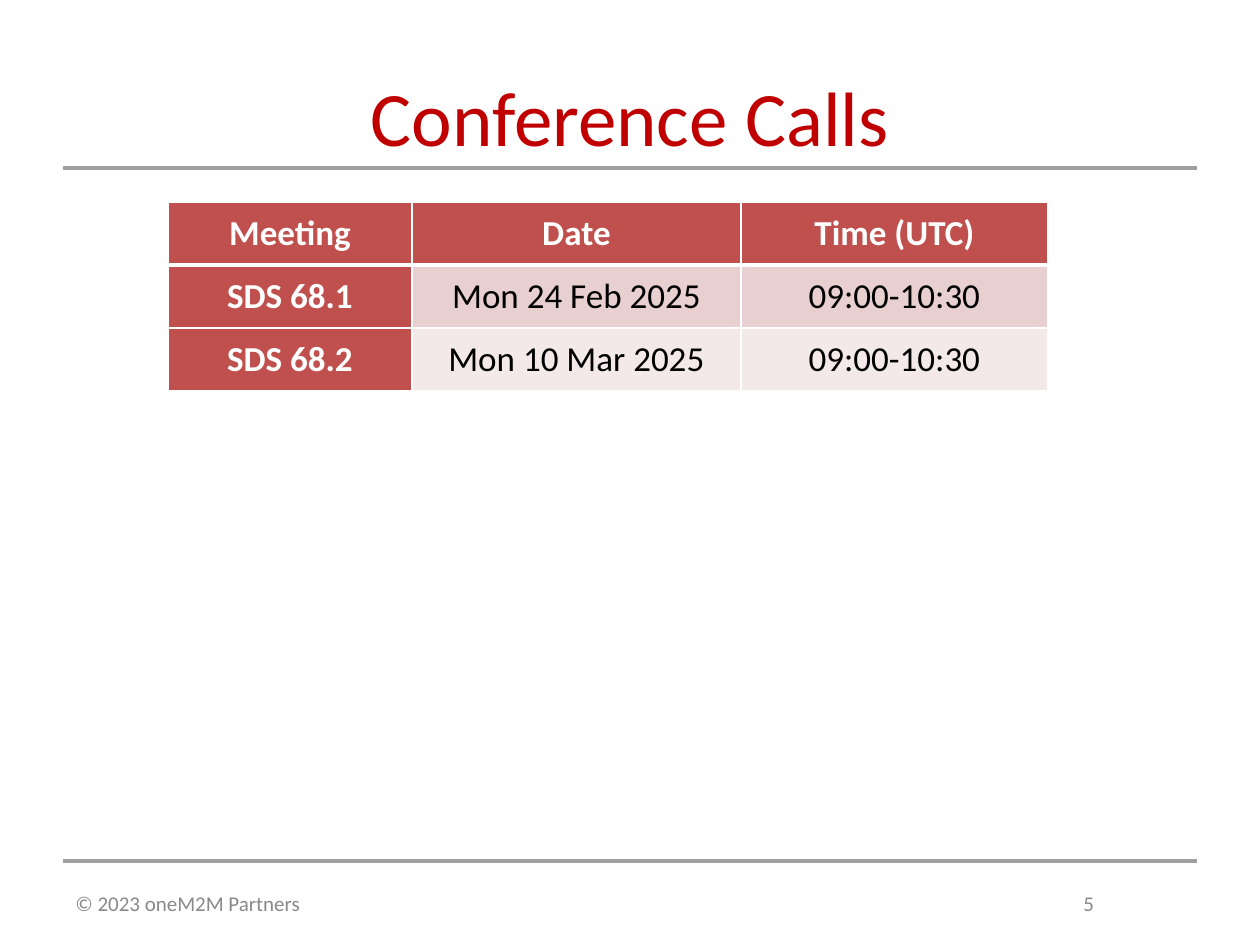
from lxml import etree
from pptx import Presentation
from pptx import util as u
from pptx.dml.color import RGBColor
from pptx.enum import shapes, text
from pptx.oxml import ns

PX_PER_INCH = 126
FONT = "Calibri"
WHITE = RGBColor(0xFF, 0xFF, 0xFF)
BLACK = RGBColor(0, 0, 0)
TITLE_RED = RGBColor(0xC0, 0, 0)
HEAD_RED = RGBColor(0xC0, 0x50, 0x4D)
BANDS = (RGBColor(0xE8, 0xD0, 0xD0), RGBColor(0xF4, 0xE9, 0xE9))
RULE_GREY = RGBColor(0xA0, 0xA0, 0xA3)
FOOTER_GREY = RGBColor(0x89, 0x89, 0x89)

LEFT, RIGHT = 63, 1197
TITLE_RULE_Y, FOOTER_Y = 168, 861
COL_WIDTHS = (244, 329, 307)
ROW_HEIGHT = 63
CALLS = (
    ("Meeting", "Date", "Time (UTC)"),
    ("SDS 68.1", "Mon 24 Feb 2025", "09:00-10:30"),
    ("SDS 68.2", "Mon 10 Mar 2025", "09:00-10:30"),
)


def px(n):
    return u.Emu(round(n * u.Inches(1) / PX_PER_INCH))


def set_format(obj, values):
    for name, value in values.items():
        setattr(obj, name, value)


def add_child(parent, tag, **attrs):
    return etree.SubElement(parent, ns.qn(tag), attrs)


def set_text(tf, wording, size, color, bold=False, align=text.PP_ALIGN.LEFT):
    p = tf.paragraphs[0]
    p.alignment = align
    r = p.add_run()
    r.text = wording
    set_format(r.font, {"name": FONT, "size": u.Pt(size), "bold": bold})
    r.font.color.rgb = color
    return p


def add_title(s, wording):
    sp = s.shapes.title
    set_format(sp, {"left": px(LEFT), "top": px(63),
                    "width": px(RIGHT - LEFT), "height": px(158)})
    tf = sp.text_frame
    set_format(tf, {"vertical_anchor": text.MSO_ANCHOR.TOP, "word_wrap": True,
                    "auto_size": text.MSO_AUTO_SIZE.NONE})
    set_text(tf, wording, 44, TITLE_RED, align=text.PP_ALIGN.CENTER)


def add_rule(s, y):
    line = s.shapes.add_connector(shapes.MSO_CONNECTOR.STRAIGHT,
                                  px(LEFT), px(y), px(RIGHT), px(y))
    line.line.color.rgb = RULE_GREY
    line.line.width = u.Pt(1.75)
    add_child(line._element.spPr, "a:effectLst")


def add_footer(s, notice, number):
    """Put the notice at the left and the page number at a tab stop."""
    sp = s.shapes.add_textbox(px(LEFT), px(FOOTER_Y), px(RIGHT - LEFT), px(84))
    tf = sp.text_frame
    set_format(tf, {"word_wrap": True, "vertical_anchor": text.MSO_ANCHOR.MIDDLE})
    p = set_text(tf, f"{notice}\t{number}", 12, FOOTER_GREY)
    tabs = add_child(p._p.get_or_add_pPr(), "a:tabLst")
    add_child(tabs, "a:tab", pos=str(px(1008)), algn="l")


def set_borders(cell, widths):
    """Draw white borders, with widths in points keyed by side."""
    tc_pr = cell._tc.get_or_add_tcPr()
    for i, side in enumerate("LRTB"):
        ln = add_child(tc_pr, f"a:ln{side}", w=str(u.Pt(widths.get(side, 1))))
        fill = add_child(ln, "a:solidFill")
        add_child(fill, "a:srgbClr", val=str(WHITE))
        tc_pr.insert(i, ln)


def add_calls_table(s):
    frame = s.shapes.add_table(len(CALLS), len(COL_WIDTHS), px(168), px(202),
                               px(sum(COL_WIDTHS)), px(ROW_HEIGHT * len(CALLS)))
    table = frame.table
    set_format(table, {"first_col": True, "horz_banding": True})
    for col, width in zip(table.columns, COL_WIDTHS):
        col.width = px(width)
    for i, row in enumerate(CALLS):
        table.rows[i].height = px(ROW_HEIGHT)
        for j, wording in enumerate(row):
            cell = table.cell(i, j)
            is_head = i == 0 or j == 0
            set_format(cell, {"margin_left": px(9), "margin_right": px(9),
                              "margin_top": 0, "margin_bottom": 0,
                              "vertical_anchor": text.MSO_ANCHOR.MIDDLE})
            cell.fill.solid()
            cell.fill.fore_color.rgb = HEAD_RED if is_head else BANDS[(i - 1) % 2]
            set_borders(cell, {0: {"B": 3}, 1: {"T": 3}}.get(i, {}))
            set_text(cell.text_frame, wording, 20, WHITE if is_head else BLACK,
                     is_head, text.PP_ALIGN.CENTER)


def main():
    prs = Presentation()
    set_format(prs, {"slide_width": px(1260), "slide_height": px(945)})
    s = prs.slides.add_slide(prs.slide_layouts[5])
    for y in (FOOTER_Y, TITLE_RULE_Y):
        add_rule(s, y)
    add_title(s, "Conference Calls")
    add_footer(s, "© 2023 oneM2M Partners", 5)
    add_calls_table(s)
    prs.save("out.pptx")


if __name__ == "__main__":
    main()
